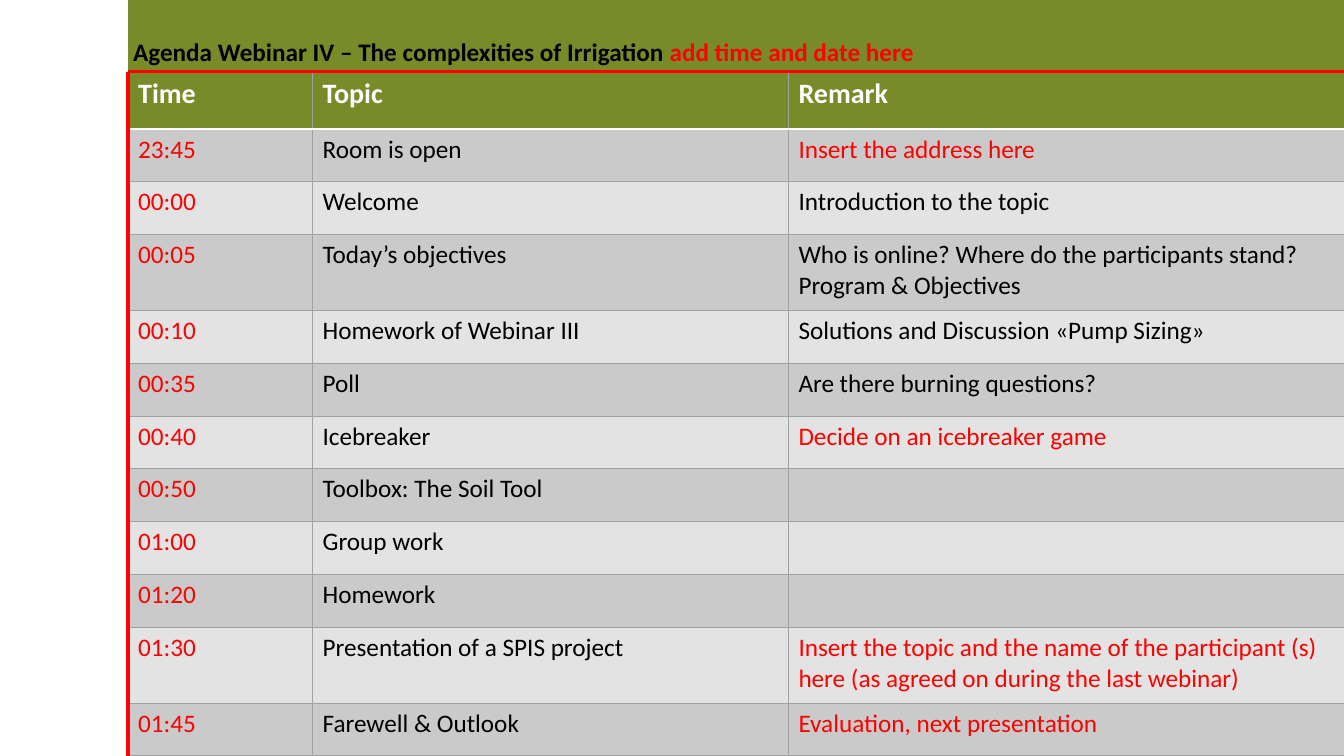
from dataclasses import dataclass

from lxml.etree import SubElement
from pptx import Presentation
from pptx.dml.color import RGBColor
from pptx.enum.shapes import MSO_CONNECTOR, MSO_SHAPE
from pptx.enum.text import MSO_ANCHOR, PP_ALIGN
from pptx.oxml import parse_xml
from pptx.oxml.ns import nsdecls, qn
from pptx.util import Inches, Pt


@dataclass(frozen=True)
class Theme:
    font: str = "Calibri"
    green: str = "798B29"
    red: str = "FF0000"
    black: str = "000000"
    white: str = "FFFFFF"
    dark_band: str = "CACACA"
    light_band: str = "E3E3E3"
    grid: str = "A1A1A1"
    header_size: int = 20
    body_size: int = 18
    grid_width: float = 0.75
    header_rule_width: float = 2
    frame_width: float = 2.25


THEME = Theme()
SLIDE_WIDTH, SLIDE_HEIGHT = 13.33, 7.5
LEFT, TABLE_TOP = 1.27, 0.71
COLUMN_WIDTHS = (1.83, 4.72, 5.51)
HEADER_HEIGHT, TALL_HEIGHT = 0.57, 0.75

HEADERS = ("Time", "Topic", "Remark")
AGENDA = (
    ("23:45", "Room is open", "Insert the address here"),
    ("00:00", "Welcome", "Introduction to the topic"),
    ("00:05", "Today’s objectives",
     "Who is online? Where do the participants stand? Program & Objectives"),
    ("00:10", "Homework of Webinar III", "Solutions and Discussion «Pump Sizing»"),
    ("00:35", "Poll", "Are there burning questions?"),
    ("00:40", "Icebreaker", "Decide on an icebreaker game"),
    ("00:50", "Toolbox: The Soil Tool", ""),
    ("01:00", "Group work", ""),
    ("01:20", "Homework", ""),
    ("01:30", "Presentation of a SPIS project",
     "Insert the topic and the name of the participant (s) here "
     "(as agreed on during the last webinar)"),
    ("01:45", "Farewell & Outlook", "Evaluation, next presentation"),
)
TALL_TIMES = {"00:05", "01:30"}
OPEN_REMARK_TIMES = {"23:45", "00:40", "01:30", "01:45"}


def style_font(font, size, color, bold=False):
    font.name = THEME.font
    font.size = Pt(size)
    font.bold = bold
    font.color.rgb = RGBColor.from_string(color)


def set_borders(cell, top, bottom):
    grid = (THEME.grid, THEME.grid_width)
    sides = (("lnL", grid), ("lnR", grid), ("lnT", top), ("lnB", bottom))
    properties = cell._tc.get_or_add_tcPr()
    for index, (tag, (color, width)) in enumerate(sides):
        border = parse_xml(
            f'<a:{tag} {nsdecls("a")} w="{Pt(width)}"><a:solidFill>'
            f'<a:srgbClr val="{color}"/></a:solidFill></a:{tag}>')
        properties.insert(index, border)


def fill_cell(cell, text, fill, size, color, bold=False):
    cell.text = text
    cell.fill.solid()
    cell.fill.fore_color.rgb = RGBColor.from_string(fill)
    style_font(cell.text_frame.paragraphs[0].font, size, color, bold)


def add_agenda_table(slide):
    height = SLIDE_HEIGHT - TABLE_TOP
    tall_total = len(TALL_TIMES) * TALL_HEIGHT
    row_height = (height - HEADER_HEIGHT - tall_total) / (len(AGENDA) - len(TALL_TIMES))
    table = slide.shapes.add_table(
        len(AGENDA) + 1, len(HEADERS), Inches(LEFT), Inches(TABLE_TOP),
        Inches(sum(COLUMN_WIDTHS)), Inches(height)).table
    for column, width in zip(table.columns, COLUMN_WIDTHS):
        column.width = Inches(width)

    grid = (THEME.grid, THEME.grid_width)
    header_rule = (THEME.white, THEME.header_rule_width)
    table.rows[0].height = Inches(HEADER_HEIGHT)
    for column, text in enumerate(HEADERS):
        cell = table.cell(0, column)
        fill_cell(cell, text, THEME.green, THEME.header_size, THEME.white, True)
        set_borders(cell, grid, header_rule)

    for row, entry in enumerate(AGENDA, start=1):
        time = entry[0]
        table.rows[row].height = Inches(TALL_HEIGHT if time in TALL_TIMES else row_height)
        band = THEME.dark_band if row % 2 else THEME.light_band
        remark_color = THEME.red if time in OPEN_REMARK_TIMES else THEME.black
        colors = (THEME.red, THEME.black, remark_color)
        for column, (text, color) in enumerate(zip(entry, colors)):
            cell = table.cell(row, column)
            fill_cell(cell, text, band, THEME.body_size, color)
            set_borders(cell, header_rule if row == 1 else grid, grid)


def add_title_bar(slide, runs):
    bar = slide.shapes.add_shape(
        MSO_SHAPE.RECTANGLE, Inches(LEFT), Inches(0),
        Inches(SLIDE_WIDTH - LEFT), Inches(TABLE_TOP))
    bar.shadow.inherit = False
    bar.fill.solid()
    bar.fill.fore_color.rgb = RGBColor.from_string(THEME.green)
    bar.line.fill.background()
    frame = bar.text_frame
    frame.word_wrap = True
    frame.vertical_anchor = MSO_ANCHOR.BOTTOM
    frame.margin_left = frame.margin_right = Inches(0.05)
    frame.margin_top = frame.margin_bottom = Inches(0.05)
    paragraph = frame.paragraphs[0]
    paragraph.alignment = PP_ALIGN.LEFT
    for text, color in runs:
        run = paragraph.add_run()
        run.text = text
        style_font(run.font, THEME.body_size, color, True)


def add_frame_line(slide, start, end):
    points = [Inches(value) for value in (*start, *end)]
    line = slide.shapes.add_connector(MSO_CONNECTOR.STRAIGHT, *points)
    line.line.color.rgb = RGBColor.from_string(THEME.red)
    line.line.width = Pt(THEME.frame_width)
    SubElement(line._element.spPr, qn("a:effectLst"))


def main():
    presentation = Presentation()
    presentation.slide_width = Inches(SLIDE_WIDTH)
    presentation.slide_height = Inches(SLIDE_HEIGHT)
    slide = presentation.slides.add_slide(presentation.slide_layouts[6])
    add_agenda_table(slide)
    add_title_bar(slide, (
        ("Agenda Webinar IV – The complexities of Irrigation ", THEME.black),
        ("add time and date here", THEME.red)))
    corner = (LEFT, TABLE_TOP)
    add_frame_line(slide, corner, (SLIDE_WIDTH, TABLE_TOP))
    add_frame_line(slide, (LEFT, SLIDE_HEIGHT), corner)
    presentation.save("out.pptx")


if __name__ == "__main__":
    main()
